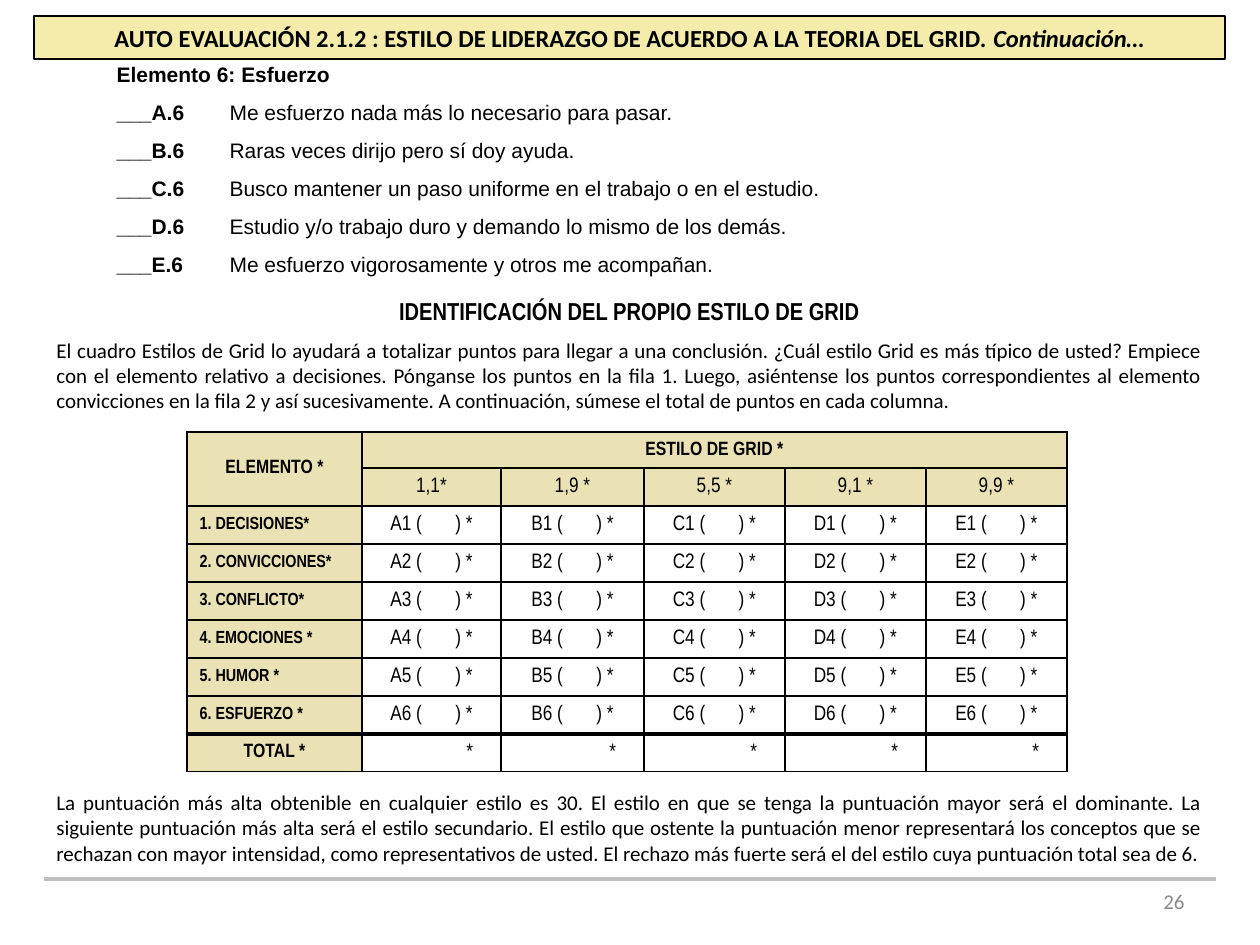
from lxml.etree import SubElement
from pptx import Presentation
from pptx.dml.color import RGBColor
from pptx.enum.shapes import MSO_CONNECTOR, MSO_SHAPE
from pptx.enum.text import MSO_ANCHOR, PP_ALIGN
from pptx.oxml.ns import qn
from pptx.util import Emu, Pt

# Content
TITLE = "AUTO EVALUACIÓN 2.1.2 : ESTILO DE LIDERAZGO DE ACUERDO A LA TEORIA DEL GRID. "
TITLE_END = "Continuación…"
EFFORT_HEADING = "Elemento 6: Esfuerzo"
EFFORT_ITEMS = [
    ("___A.6", "Me esfuerzo nada más lo necesario para pasar."),
    ("___B.6", "Raras veces dirijo pero sí doy ayuda."),
    ("___C.6", "Busco mantener un paso uniforme en el trabajo o en el estudio."),
    ("___D.6", "Estudio y/o trabajo duro y demando lo mismo de los demás."),
    ("___E.6", "Me esfuerzo vigorosamente y otros me acompañan."),
]
GRID_HEADING = "IDENTIFICACIÓN DEL PROPIO ESTILO DE GRID"
INSTRUCTIONS = (
    "El cuadro Estilos de Grid lo ayudará a totalizar puntos para llegar a una conclusión. "
    "¿Cuál estilo Grid es más típico de usted? Empiece con el elemento relativo a decisiones. "
    "Pónganse los puntos en la fila 1. Luego, asiéntense los puntos correspondientes al "
    "elemento convicciones en la fila 2 y así sucesivamente. A continuación, súmese el total "
    "de puntos en cada columna."
)
SCORING = (
    "La puntuación más alta obtenible en cualquier estilo es 30. El estilo en que se tenga la "
    "puntuación mayor será el dominante. La siguiente puntuación más alta será el estilo "
    "secundario. El estilo que ostente la puntuación menor representará los conceptos que se "
    "rechazan con mayor intensidad, como representativos de usted. El rechazo más fuerte será "
    "el del estilo cuya puntuación total sea de 6."
)
STYLES = ["1,1*", "1,9 *", "5,5 *", "9,1 *", "9,9 *"]
ELEMENTS = ["1. DECISIONES*", "2. CONVICCIONES*", "3. CONFLICTO*",
            "4. EMOCIONES *", "5. HUMOR *", "6. ESFUERZO *"]
PAGE_NUMBER = "26"

COLORS = {"ink": "000000", "banner": "F5ECAB", "label": "EAE2B4",
          "paper": "FFFFFF", "rule": "BFBFBF", "number": "898989"}
EFFORT_COLUMNS, EFFORT_ROWS = [113, 927], [37] + [38] * 5
GRID_COLUMNS, GRID_ROWS = [175, 139, 143, 141, 141, 141], [36, 37] + [38] * 6 + [37]
TOTAL_ROW = len(GRID_ROWS) - 1
NARROW = "Arial Narrow"
LEFT, CENTER, RIGHT, JUSTIFY = PP_ALIGN.LEFT, PP_ALIGN.CENTER, PP_ALIGN.RIGHT, PP_ALIGN.JUSTIFY


def px(count):
    return Emu(round(count * 914400 / 126))


def color(name):
    return RGBColor.from_string(COLORS[name])


def write(para, text, font, size, align, bold=False, ink="ink"):
    para.add_run().text = text
    para.alignment = align
    para.font.name = font
    para.font.size = Pt(size)
    para.font.bold = bold
    para.font.color.rgb = color(ink)


def add_text_frame(left, top, width, height):
    frame = page.shapes.add_textbox(px(left), px(top), px(width), px(height)).text_frame
    frame.word_wrap = True
    frame.vertical_anchor = MSO_ANCHOR.MIDDLE
    return frame


def add_plain_table(left, top, columns, rows):
    table = page.shapes.add_table(len(rows), len(columns), px(left), px(top),
                                  px(sum(columns)), px(sum(rows))).table
    table.first_row = table.horz_banding = False
    for column, width in zip(table.columns, columns):
        column.width = px(width)
    for row, height in zip(table.rows, rows):
        row.height = px(height)
    return table


def add_borders(cell, row):
    properties = cell._tc.get_or_add_tcPr()
    thick = {"lnT": row == TOTAL_ROW, "lnB": row == TOTAL_ROW - 1}
    for position, side in enumerate(("lnL", "lnR", "lnT", "lnB")):
        width = Pt(2.25 if thick.get(side) else 1)
        line = SubElement(properties, qn("a:" + side), w=str(width))
        SubElement(SubElement(line, qn("a:solidFill")), qn("a:srgbClr"), val=COLORS["ink"])
        properties.insert(position, line)


deck = Presentation()
deck.slide_width, deck.slide_height = px(1260), px(945)
page = deck.slides.add_slide(deck.slide_layouts[6])

# Footer rule
rule = page.shapes.add_connector(MSO_CONNECTOR.STRAIGHT, px(44), px(879), px(1216), px(879))
rule.line.color.rgb = color("rule")
rule.line.width = Pt(2)
SubElement(rule._element.spPr, qn("a:effectLst"))

# Grid heading and instructions
frame = add_text_frame(44, 276, 1171, 157)
write(frame.paragraphs[0], GRID_HEADING, NARROW, 14, CENTER, bold=True)
para = frame.add_paragraph()
para.space_before = Pt(7)
write(para, INSTRUCTIONS, "Calibri", 12, JUSTIFY)

# Grid score table: (text, size, alignment, bold) for each cell
grid = add_plain_table(187, 432, GRID_COLUMNS, GRID_ROWS)
content = [
    [("ELEMENTO *", 11, CENTER, True), ("ESTILO DE GRID *", 11, CENTER, True)] + [None] * 4,
    [None] + [(style, 12, CENTER, False) for style in STYLES],
]
for number, element in enumerate(ELEMENTS, 1):
    content.append([(element, 10, LEFT, True)]
                   + [(f"{letter}{number} (       ) *", 12, CENTER, False) for letter in "ABCDE"])
content.append([("TOTAL *", 11, CENTER, True)] + [("*", 12, RIGHT, False)] * len(STYLES))

for row, entries in enumerate(content):
    for column, entry in enumerate(entries):
        cell = grid.cell(row, column)
        cell.vertical_anchor = MSO_ANCHOR.MIDDLE
        cell.fill.solid()
        cell.fill.fore_color.rgb = color("label" if row < 2 or column == 0 else "paper")
        add_borders(cell, row)
        if entry:
            text, size, align, bold = entry
            write(cell.text_frame.paragraphs[0], text, NARROW, size, align, bold)
            if align == RIGHT:
                cell.margin_right = px(28)
grid.cell(0, 0).merge(grid.cell(1, 0))
grid.cell(0, 1).merge(grid.cell(0, len(STYLES)))

# Scoring note
frame = add_text_frame(44, 770, 1171, 115)
write(frame.paragraphs[0], SCORING, "Calibri", 12, JUSTIFY)

# Effort statements
effort = add_plain_table(104, 57, EFFORT_COLUMNS, EFFORT_ROWS)
for row, entries in enumerate([(EFFORT_HEADING, None)] + EFFORT_ITEMS):
    for column, text in enumerate(entries):
        cell = effort.cell(row, column)
        cell.fill.background()
        if text:
            write(cell.text_frame.paragraphs[0], text, "Arial", 12,
                  JUSTIFY if row else LEFT, bold=column == 0)
effort.cell(0, 0).merge(effort.cell(0, 1))

# Page number
frame = add_text_frame(903, 876, 294, 50)
write(frame.paragraphs[0], PAGE_NUMBER, "Calibri", 12, RIGHT, ink="number")

# Title banner
banner = page.shapes.add_shape(MSO_SHAPE.RECTANGLE, px(34), px(16), px(1191), px(43))
banner.shadow.inherit = False
banner.fill.solid()
banner.fill.fore_color.rgb = color("banner")
banner.line.color.rgb = color("ink")
banner.line.width = Pt(0.75)
banner.text_frame.word_wrap = True
para = banner.text_frame.paragraphs[0]
write(para, TITLE, "Calibri", 14, CENTER, bold=True)
span = para.add_run()
span.text = TITLE_END
span.font.italic = True

deck.save("out.pptx")
